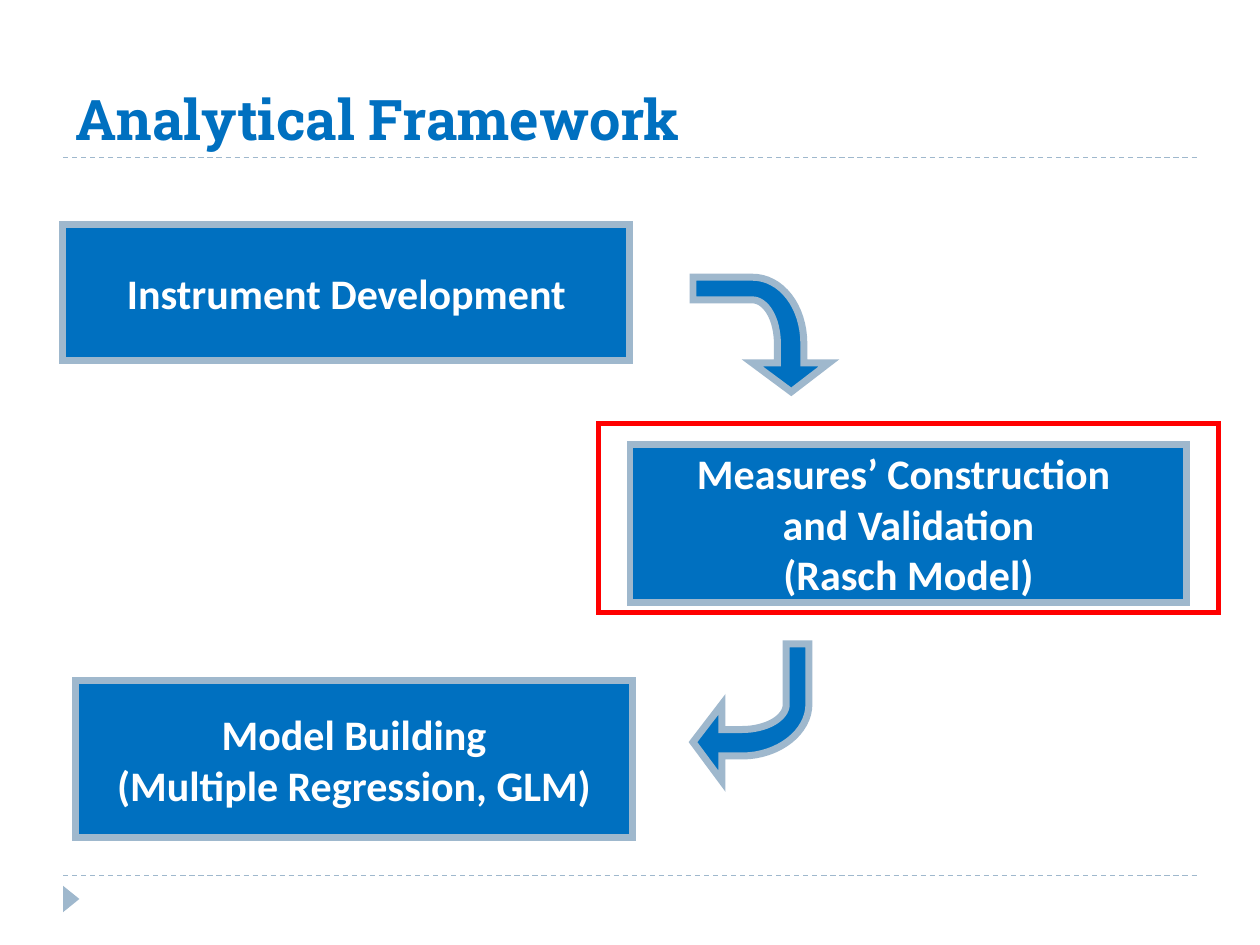
from lxml import etree
from pptx import Presentation
from pptx import util as u
from pptx.dml.color import RGBColor
from pptx.enum import dml, shapes, text
from pptx.oxml.ns import qn

COLORS = {"blue": "0070C0", "mist": "9FB8CD", "red": "FF0000", "white": "FFFFFF"}

DOWN_ARROW = [(6.28, 3.11), (6.58, 2.88), (6.38, 2.88), (6.38, 2.73),
              (6.38, 2.43, 6.2, 2.2, 5.97, 2.2), (5.5, 2.2), (5.5, 2.38), (5.97, 2.38),
              (6.08, 2.38, 6.17, 2.53, 6.17, 2.73), (6.17, 2.88), (5.97, 2.88)]
LEFT_ARROW = [(5.5, 5.89), (5.73, 6.2), (5.73, 6), (5.89, 6),
              (6.18, 6, 6.42, 5.81, 6.42, 5.59), (6.42, 5.11), (6.24, 5.11), (6.24, 5.59),
              (6.24, 5.7, 6.08, 5.79, 5.89, 5.79), (5.73, 5.79), (5.73, 5.59)]


def rgb(name):
    return RGBColor.from_string(COLORS[name])


def flatten(steps, n=16):
    """Turn points and cubic curves (three points in one tuple) into plain points."""
    points = []
    for step in steps:
        if len(step) == 2:
            points.append(step)
            continue
        ctrl = [points[-1], step[:2], step[2:4], step[4:]]
        for i in range(1, n + 1):
            t = i / n
            weights = ((1 - t) ** 3, 3 * t * (1 - t) ** 2, 3 * t * t * (1 - t), t ** 3)
            points.append(tuple(sum(w * c[k] for w, c in zip(weights, ctrl)) for k in (0, 1)))
    return points


class Deck:
    """Holds the style and the current slide."""

    def __init__(self, prs):
        self.s = prs.slides.add_slide(prs.slide_layouts[6])

    def paint(self, sp, fill=None, line=None, width=4):
        sp.shadow.inherit = False
        if fill:
            sp.fill.solid()
            sp.fill.fore_color.rgb = rgb(fill)
        else:
            sp.fill.background()
        if line:
            sp.line.color.rgb = rgb(line)
            sp.line.width = u.Pt(width)
            ln = sp.element.spPr.find(qn("a:ln"))
            etree.SubElement(ln, qn("a:miter"), lim="800000")
        else:
            sp.line.fill.background()
        return sp

    def label(self, sp, words, font, size, color, align):
        tf = sp.text_frame
        tf.text = words
        for p in tf.paragraphs:
            p.alignment = align
            for r in p.runs:
                r.font.name, r.font.size, r.font.bold = font, u.Pt(size), True
                r.font.color.rgb = rgb(color)

    def shape(self, kind, at, **style):
        sp = self.s.shapes.add_shape(kind, *map(u.Inches, at))
        return self.paint(sp, **style)

    def rule(self, y):
        c = self.s.shapes.add_connector(shapes.MSO_CONNECTOR.STRAIGHT, u.Inches(0.5),
                                        u.Inches(y), u.Inches(9.5), u.Inches(y))
        c.line.color.rgb = rgb("mist")
        c.line.width = u.Pt(0.75)
        c.line.dash_style = dml.MSO_LINE.DASH
        etree.SubElement(c.element.spPr, qn("a:effectLst"))

    def title(self, words, at):
        sp = self.s.shapes.add_textbox(*map(u.Inches, at))
        sp.text_frame.word_wrap = True
        sp.text_frame.vertical_anchor = text.MSO_ANCHOR.BOTTOM
        self.label(sp, words, "Roboto Slab", 32, "blue", text.PP_ALIGN.LEFT)

    def box(self, words, at):
        sp = self.shape(shapes.MSO_SHAPE.RECTANGLE, at, fill="blue", line="mist")
        sp.text_frame.word_wrap = False
        sp.text_frame.vertical_anchor = text.MSO_ANCHOR.MIDDLE
        self.label(sp, words, "Calibri", 24, "white", text.PP_ALIGN.CENTER)

    def arrow(self, steps):
        start, *rest = [(u.Inches(x), u.Inches(y)) for x, y in flatten(steps)]
        fb = self.s.shapes.build_freeform(*start)
        fb.add_line_segments(rest, close=True)
        self.paint(fb.convert_to_shape(), fill="blue", line="mist")


def main():
    prs = Presentation()
    prs.slide_width, prs.slide_height = u.Inches(10), u.Inches(7.5)
    deck = Deck(prs)
    for y in (6.95, 1.25):
        deck.rule(y)
    marker = deck.shape(shapes.MSO_SHAPE.ISOSCELES_TRIANGLE, (0.46, 7.07, 0.21, 0.13),
                        fill="mist")
    marker.rotation = 90
    deck.title("Analytical Framework", (0.5, 0.17, 9, 1.08))
    deck.box("Instrument Development", (0.5, 1.78, 4.5, 1.08))
    deck.box("Measures’ Construction \nand Validation\n(Rasch Model)", (5, 3.53, 4.42, 1.25))
    deck.box("Model Building\n(Multiple Regression, GLM)", (0.6, 5.4, 4.42, 1.25))
    for steps in (DOWN_ARROW, LEFT_ARROW):
        deck.arrow(steps)
    deck.shape(shapes.MSO_SHAPE.RECTANGLE, (4.75, 3.36, 4.92, 1.5), line="red", width=3)
    prs.save("out.pptx")


if __name__ == "__main__":
    main()
